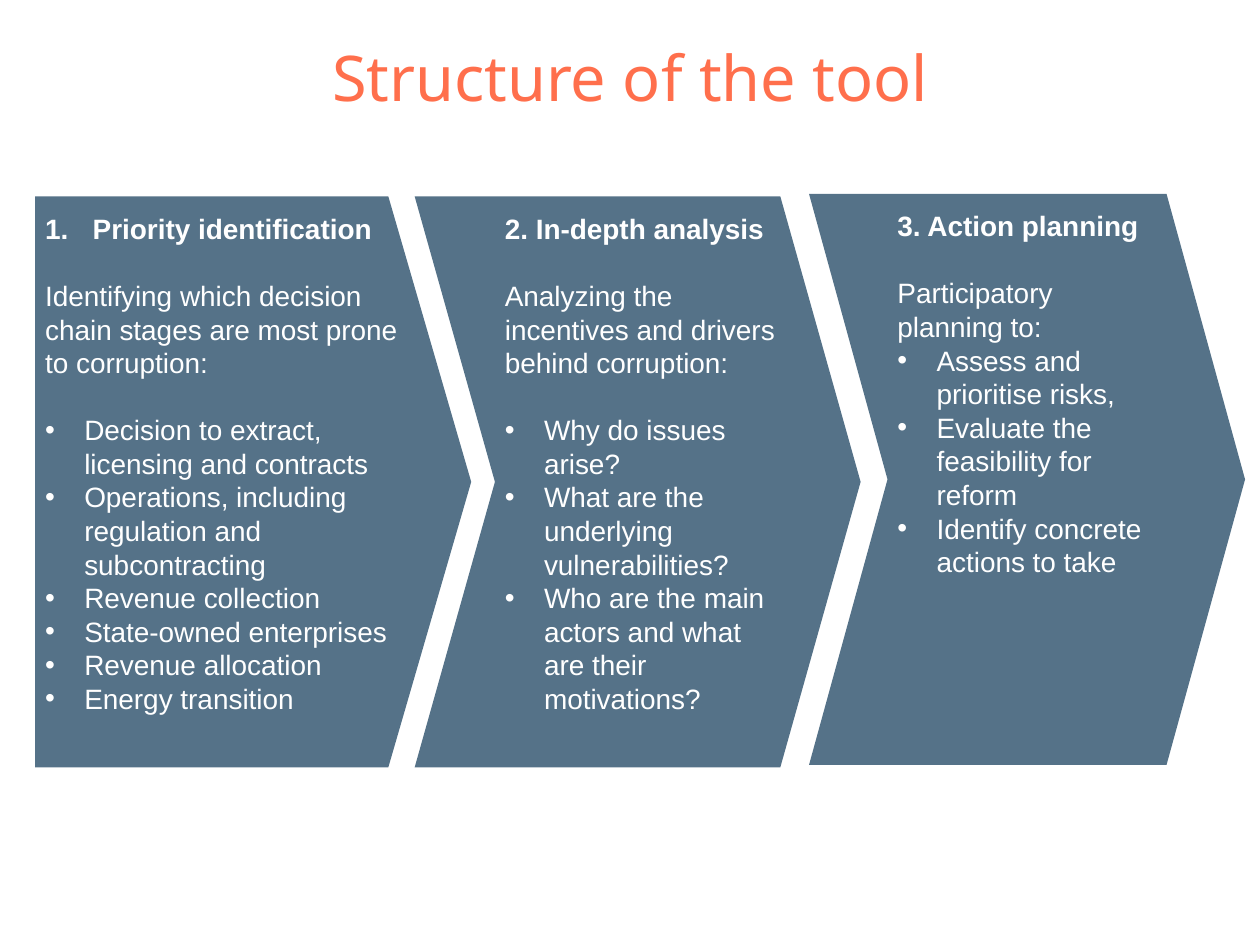
from lxml import etree
from pptx import Presentation
from pptx.dml.color import RGBColor
from pptx.enum.shapes import MSO_SHAPE
from pptx.enum.text import MSO_ANCHOR, PP_ALIGN
from pptx.oxml.ns import qn
from pptx.util import Cm, Pt

ORANGE = RGBColor(0xFF, 0x6F, 0x4C)
SLATE = RGBColor(0x55, 0x72, 0x88)
WHITE = RGBColor(0xFF, 0xFF, 0xFF)
PENTAGON, CHEVRON = MSO_SHAPE.PENTAGON, MSO_SHAPE.CHEVRON
TOP, MIDDLE = MSO_ANCHOR.TOP, MSO_ANCHOR.MIDDLE
LEFT, CENTER = PP_ALIGN.LEFT, PP_ALIGN.CENTER
LINE = Pt(19.2)
BULLET = ("buChar", {"char": "•"}, Cm(0.79))
NUMBER = ("buAutoNum", {"type": "arabicPeriod"}, Cm(0.96))

STAGES = [
    (PENTAGON, 0.71, 3.96, 8.79, 0.19, "Priority identification", NUMBER,
     "Identifying which decision chain stages are most prone to corruption:", LINE,
     ["Decision to extract, licensing and contracts",
      "Operations, including regulation and subcontracting",
      "Revenue collection", "State-owned enterprises",
      "Revenue allocation", "Energy transition"]),
    (CHEVRON, 8.36, 3.96, 8.99, 0.18, "2. In-depth analysis", None,
     "Analyzing the incentives and drivers behind corruption:", LINE,
     ["Why do issues arise?", "What are the underlying vulnerabilities?",
      "Who are the main actors and what are their motivations?"]),
    (CHEVRON, 16.31, 3.91, 8.79, 0.18, "3. Action planning", None,
     "Participatory planning to:", Pt(0),
     ["Assess and prioritise risks,", "Evaluate the feasibility for reform",
      "Identify concrete actions to take"]),
]


def apply(target, values):
    for name, value in values.items():
        setattr(target, name, value)


class SlideBuilder:
    title_font = {"name": "Noto Sans", "size": Pt(36)}
    body_font = {"name": "Arial", "size": Pt(16)}
    body_frame = {"word_wrap": True, "vertical_anchor": TOP,
                  "margin_left": Cm(0.2), "margin_right": Cm(0.1),
                  "margin_top": Cm(0.3), "margin_bottom": Cm(0.3)}

    def __init__(self, slide):
        self.slide = slide

    def title(self, text):
        box = self.slide.shapes.add_textbox(Cm(1.27), Cm(0.76), Cm(22.86), Cm(1.57))
        apply(box.text_frame, {"word_wrap": True, "vertical_anchor": MIDDLE})
        para = box.text_frame.paragraphs[0]
        para.alignment = CENTER
        span = para.add_run()
        span.text = text
        apply(span.font, self.title_font)
        span.font.color.rgb = ORANGE

    def paragraph(self, para, text, marker=None, bold=False, gap=Pt(0)):
        apply(para, {"alignment": LEFT, "line_spacing": LINE, "space_before": gap})
        if marker:
            tag, values, indent = marker
            properties = para._p.get_or_add_pPr()
            properties.set("marL", str(indent))
            properties.set("indent", str(-indent))
            etree.SubElement(properties, qn("a:buFont"), typeface="Arial")
            etree.SubElement(properties, qn(f"a:{tag}"), **values)
        span = para.add_run()
        span.text = text
        apply(span.font, {**self.body_font, "bold": bold})
        span.font.color.rgb = WHITE

    def stage(self, kind, left, top, width, point, heading, marker, intro, gap, items):
        arrow = self.slide.shapes.add_shape(kind, Cm(left), Cm(top), Cm(width), Cm(11.51))
        arrow.adjustments[0] = point
        arrow.shadow.inherit = False
        arrow.fill.solid()
        arrow.fill.fore_color.rgb = SLATE
        arrow.line.fill.background()
        frame = arrow.text_frame
        apply(frame, self.body_frame)
        self.paragraph(frame.paragraphs[0], heading, marker, bold=True)
        self.paragraph(frame.add_paragraph(), intro, gap=LINE)
        for index, item in enumerate(items):
            self.paragraph(frame.add_paragraph(), item, BULLET,
                           gap=Pt(0) if index else gap)


def main():
    deck = Presentation()
    apply(deck, {"slide_width": Cm(25.4), "slide_height": Cm(19.05)})
    page = SlideBuilder(deck.slides.add_slide(deck.slide_layouts[6]))
    page.title("Structure of the tool")
    for stage in STAGES:
        page.stage(*stage)
    deck.save("out.pptx")


if __name__ == "__main__":
    main()
